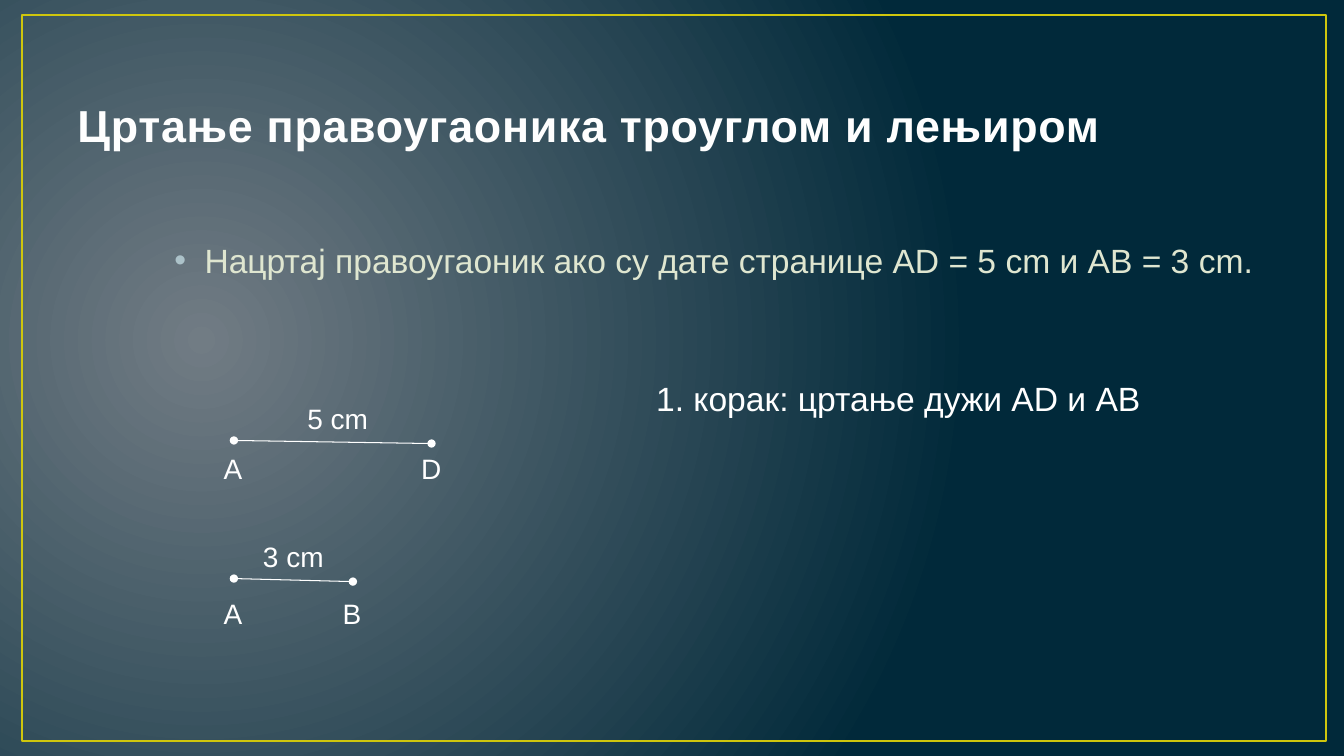
from lxml.etree import SubElement
from pptx import Presentation
from pptx.dml.color import RGBColor
from pptx.enum.shapes import MSO_CONNECTOR, MSO_SHAPE
from pptx.enum.text import MSO_ANCHOR, MSO_AUTO_SIZE
from pptx.oxml import parse_xml
from pptx.oxml.ns import nsdecls, qn
from pptx.util import Inches, Pt


def paint(hue):
    return RGBColor.from_string(hue)


def write(text, left, top, width, height, size=20, hue="FFFFFF"):
    box = slide.shapes.add_textbox(
        Inches(left), Inches(top), Inches(width), Inches(height))
    frame = box.text_frame
    frame.word_wrap = True
    frame.auto_size = MSO_AUTO_SIZE.NONE
    para = frame.paragraphs[0]
    para.text = text
    para.font.name = "Arial"
    para.font.size = Pt(size)
    para.font.color.rgb = paint(hue)
    return box


deck = Presentation()
deck.slide_width = Inches(13.33)
deck.slide_height = Inches(7.5)
slide = deck.slides.add_slide(deck.slide_layouts[6])

fill = slide.background.fill
fill.gradient()
for stop, hue in zip(fill.gradient_stops, ("717C84", "01293A")):
    stop.color.rgb = paint(hue)
grad = next(slide.element.iter(qn("a:gradFill")))
grad.replace(grad.find(qn("a:lin")), parse_xml(
    f'<a:path {nsdecls("a")} path="circle">'
    '<a:fillToRect l="15000" t="50000" r="85000" b="60000"/></a:path>'))

border = slide.shapes.add_shape(
    MSO_SHAPE.RECTANGLE, Inches(0.22), Inches(0.15), Inches(12.93), Inches(7.2))
border.shadow.inherit = False
border.fill.background()
border.line.color.rgb = paint("CFC60D")
border.line.width = Pt(1.5)

title = write("Цртање правоугаоника троуглом и лењиром",
              0.67, 0.3, 12, 1.25, 32, "FEFEFE")
title.text_frame.vertical_anchor = MSO_ANCHOR.BOTTOM
para = title.text_frame.paragraphs[0]
para.font.bold = True
props = para.runs[0].font
props.bold = True
rpr = next(title.element.iter(qn("a:rPr")))
rpr.set("spc", "50")
rpr.insert(0, parse_xml(
    f'<a:ln {nsdecls("a")} w="13335"><a:solidFill>'
    '<a:srgbClr val="384F55"/></a:solidFill></a:ln>'))

task = write("Нацртај правоугаоник ако су дате странице AD = 5 cm и AB = 3 cm.",
             1.63, 2.33, 10.95, 4.13, 24, "DFE6D0")
para = task.text_frame.paragraphs[0]
para.space_before = Pt(4.8)
ppr = next(task.element.iter(qn("a:pPr")))
ppr.set("marL", str(Inches(0.3)))
ppr.set("indent", str(Inches(-0.3)))
bullet = (f'<a:buClr {nsdecls("a")}><a:srgbClr val="ACC2C9"/></a:buClr>',
          f'<a:buFont {nsdecls("a")} typeface="Arial"/>',
          f'<a:buChar {nsdecls("a")} char="•"/>')
spot = list(ppr).index(ppr.find(qn("a:spcBef"))) + 1
for step, part in enumerate(bullet):
    ppr.insert(spot + step, parse_xml(part))

start = 2.32
for end, y, drop, mark, name, size in (
        (4.28, 4.37, 0.06, 2.95, "D", "5 cm"),
        (3.5, 5.74, 0.13, 2.51, "B", "3 cm")):
    side = slide.shapes.add_connector(
        MSO_CONNECTOR.STRAIGHT, Inches(start), Inches(y),
        Inches(end), Inches(y + 0.03))
    side.line.color.rgb = paint("FFFFFF")
    side.line.width = Pt(0.75)
    line = side.line._get_or_add_ln()
    for tip in ("a:headEnd", "a:tailEnd"):
        SubElement(line, qn(tip), type="oval")
    SubElement(side.element.spPr, qn("a:effectLst"))
    for x, label in ((start, "А"), (end, name)):
        write(label, x - 0.2, y + drop, 0.4, 0.44)
    write(size, mark, y - 0.44, 0.97, 0.44)

write("1. корак: цртање дужи AD и AB", 6.41, 3.7, 5.64, 0.5, 24)

deck.save("out.pptx")
